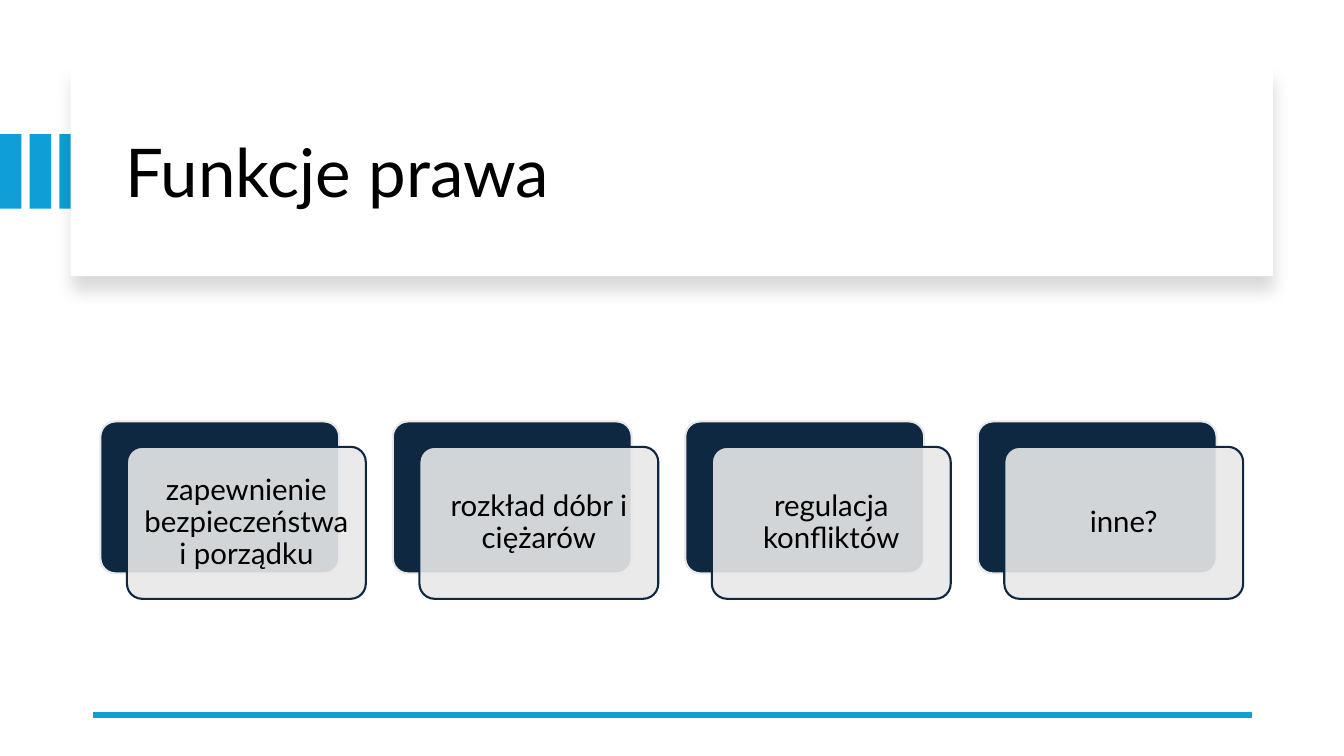
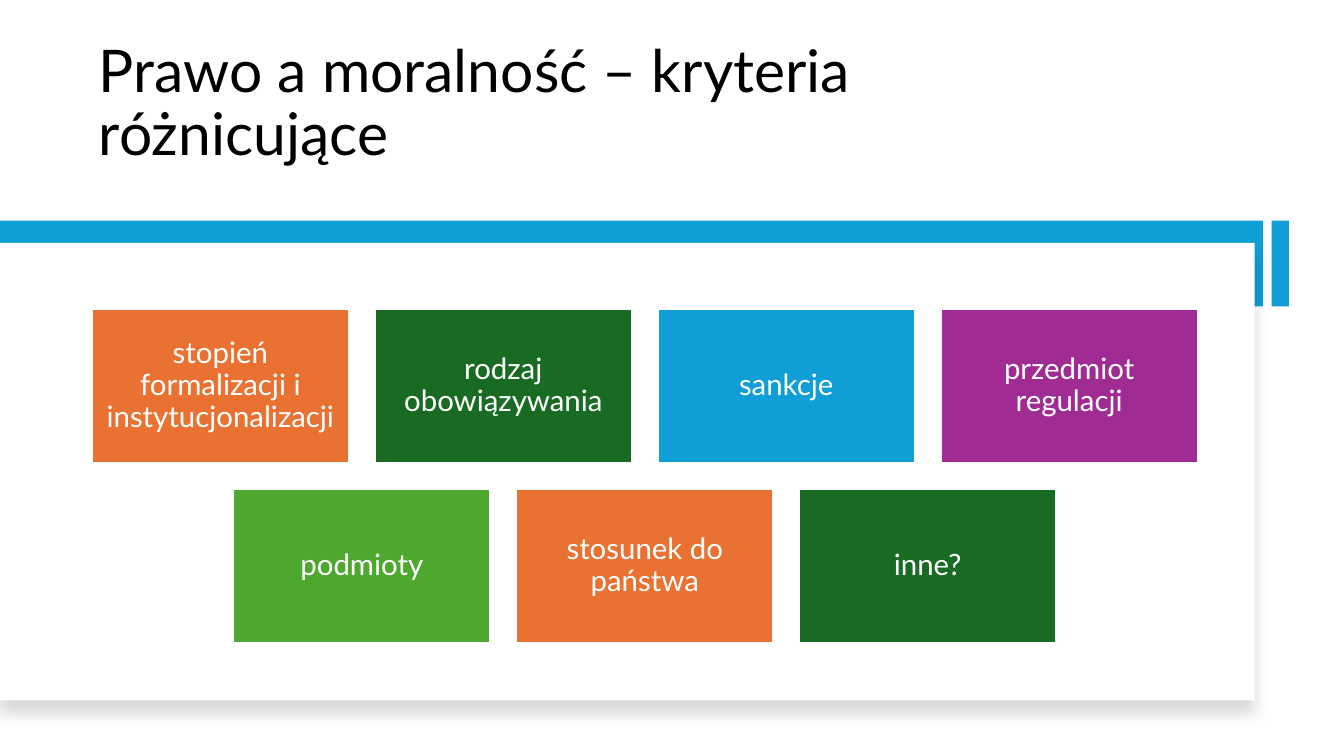
import pptx
import pptx.util
import pptx.dml.color
import pptx.enum.shapes
import pptx.enum.text
import pptx.oxml
import pptx.oxml.ns
from lxml import etree

Cm, Pt = pptx.util.Cm, pptx.util.Pt
RGBColor = pptx.dml.color.RGBColor
SHAPE = pptx.enum.shapes.MSO_SHAPE
ANCHOR = pptx.enum.text.MSO_ANCHOR
ALIGN = pptx.enum.text.PP_ALIGN
qn = pptx.oxml.ns.qn

BLACK = RGBColor(0x00, 0x00, 0x00)
WHITE = RGBColor(0xFF, 0xFF, 0xFF)
BLUE = RGBColor(0x0F, 0x9E, 0xD5)
NAVY = RGBColor(0x0E, 0x28, 0x41)
GREY = RGBColor(0xE8, 0xE8, 0xE8)
ORANGE = RGBColor(0xE9, 0x71, 0x32)
DARK_GREEN = RGBColor(0x19, 0x6B, 0x24)
GREEN = RGBColor(0x4E, 0xA7, 0x2E)
PURPLE = RGBColor(0xA0, 0x2B, 0x93)

PANEL_SHADOW = (
    '<a:effectLst xmlns:a="http://schemas.openxmlformats.org/drawingml/2006/main">'
    '<a:outerShdw blurRad="139700" dist="127000" dir="5400000" algn="t" rotWithShape="0">'
    '<a:srgbClr val="000000"><a:alpha val="15000"/></a:srgbClr>'
    '</a:outerShdw></a:effectLst>'
)


def write(shape, text, size, color, align, anchor):
    frame = shape.text_frame
    frame.text = text
    frame.word_wrap = True
    frame.auto_size = pptx.enum.text.MSO_AUTO_SIZE.NONE
    frame.vertical_anchor = anchor
    paragraph = frame.paragraphs[0]
    paragraph.alignment = align
    paragraph.line_spacing = 0.9
    for name, value in {"name": "Lato", "size": Pt(size)}.items():
        setattr(paragraph.font, name, value)
    paragraph.font.color.rgb = color


def add_block(slide, box, fill, line=None, kind=SHAPE.RECTANGLE, text=None, color=WHITE):
    """Add a filled shape at box (left, top, width, height in cm), with optional centred text."""
    block = slide.shapes.add_shape(kind, *map(Cm, box))
    block.shadow.inherit = False
    block.fill.solid()
    block.fill.fore_color.rgb = fill
    if line is None:
        block.line.fill.background()
    else:
        block.line.color.rgb = line
        block.line.width = Pt(1.5)
    if kind == SHAPE.ROUNDED_RECTANGLE:
        block.adjustments[0] = 0.1
    if text:
        for side in ("left", "top", "right", "bottom"):
            setattr(block.text_frame, "margin_" + side, Cm(0.23))
        write(block, text, 21, color, ALIGN.CENTER, ANCHOR.MIDDLE)
    return block


deck = pptx.Presentation()
deck.slide_width, deck.slide_height = Cm(33.87), Cm(19.05)

# Frame of each slide: blue bars, white panel with a shadow, title
frames = [
    {
        "title": "Funkcje prawa", "size": 48, "anchor": ANCHOR.MIDDLE,
        "title_box": (2.9, 2.26, 28.27, 4.32),
        "bars": [(i * 0.75, 3.38, 0.54, 1.88) for i in range(3)],
        "panel": (1.78, 1.7, 30.3, 5.26),
    },
    {
        "title": "Prawo a moralność – kryteria różnicujące", "size": 42, "anchor": ANCHOR.BOTTOM,
        "title_box": (2.24, 1.07, 25.65, 3.3),
        "bars": [(32.05, 5.56, 0.43, 2.16), (0, 5.56, 31.83, 2.16)],
        "panel": (0, 6.12, 31.62, 11.53),
    },
]
slides = []
for frame in frames:
    slide = deck.slides.add_slide(deck.slide_layouts[5])
    slides.append(slide)
    for bar in frame["bars"]:
        add_block(slide, bar, BLUE)
    panel = add_block(slide, frame["panel"], WHITE)
    properties = panel._element.spPr
    properties.replace(properties.find(qn("a:effectLst")), pptx.oxml.parse_xml(PANEL_SHADOW))

    title = slide.shapes.title
    slide.shapes._spTree.append(title._element)  # bring in front of the panel
    title.left, title.top, title.width, title.height = map(Cm, frame["title_box"])
    write(title, frame["title"], frame["size"], BLACK, ALIGN.LEFT, frame["anchor"])

functions_slide, criteria_slide = slides

# Functions of law: a row of layered cards above a blue rule
rule = functions_slide.shapes.add_connector(
    pptx.enum.shapes.MSO_CONNECTOR.STRAIGHT, Cm(31.55), Cm(18.01), Cm(2.34), Cm(18.01))
rule.line.color.rgb = BLUE
rule.line.width = Pt(4.5)
etree.SubElement(rule._element.spPr, qn("a:effectLst"))

functions = ["zapewnienie bezpieczeństwa i porządku", "rozkład dóbr i ciężarów",
             "regulacja konfliktów", "inne?"]
CARD_W, CARD_H, CARD_PITCH = 6.02, 3.83, 7.37
for i, function in enumerate(functions):
    left, top = 2.53 + i * CARD_PITCH, 10.62
    add_block(functions_slide, (left, top, CARD_W, CARD_H), NAVY, GREY, SHAPE.ROUNDED_RECTANGLE)
    card = add_block(functions_slide, (left + 0.67, top + 0.64, CARD_W, CARD_H), GREY, NAVY,
                     SHAPE.ROUNDED_RECTANGLE, function, BLACK)
    tint = card._element.spPr.find(qn("a:solidFill")).find(qn("a:srgbClr"))
    etree.SubElement(tint, qn("a:alpha"), val="90000")

# Criteria: two centred rows of tiles
criteria_rows = [
    [("stopień formalizacji i instytucjonalizacji", ORANGE), ("rodzaj obowiązywania", DARK_GREEN),
     ("sankcje", BLUE), ("przedmiot regulacji", PURPLE)],
    [("podmioty", GREEN), ("stosunek do państwa", ORANGE), ("inne?", DARK_GREEN)],
]
TILE_W, TILE_H, TILE_GAP, ROWS_CENTRE = 6.48, 3.89, 0.65, 16.25
for row, criteria in enumerate(criteria_rows):
    row_width = len(criteria) * (TILE_W + TILE_GAP) - TILE_GAP
    top = 7.78 + row * (TILE_H + TILE_GAP)
    for column, (criterion, fill) in enumerate(criteria):
        left = ROWS_CENTRE - row_width / 2 + column * (TILE_W + TILE_GAP)
        add_block(criteria_slide, (left, top, TILE_W, TILE_H), fill, WHITE, text=criterion)

deck.save("out.pptx")
